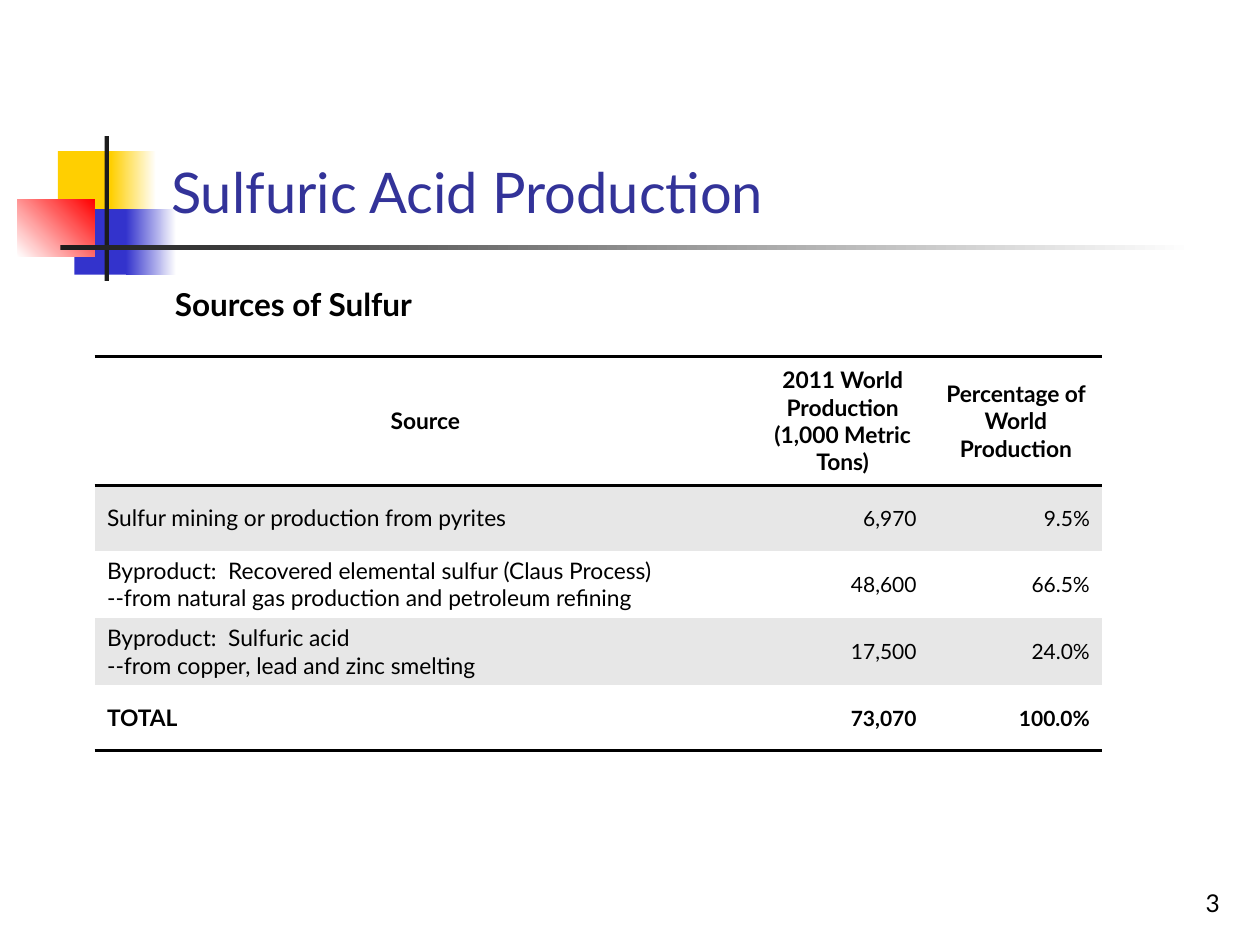
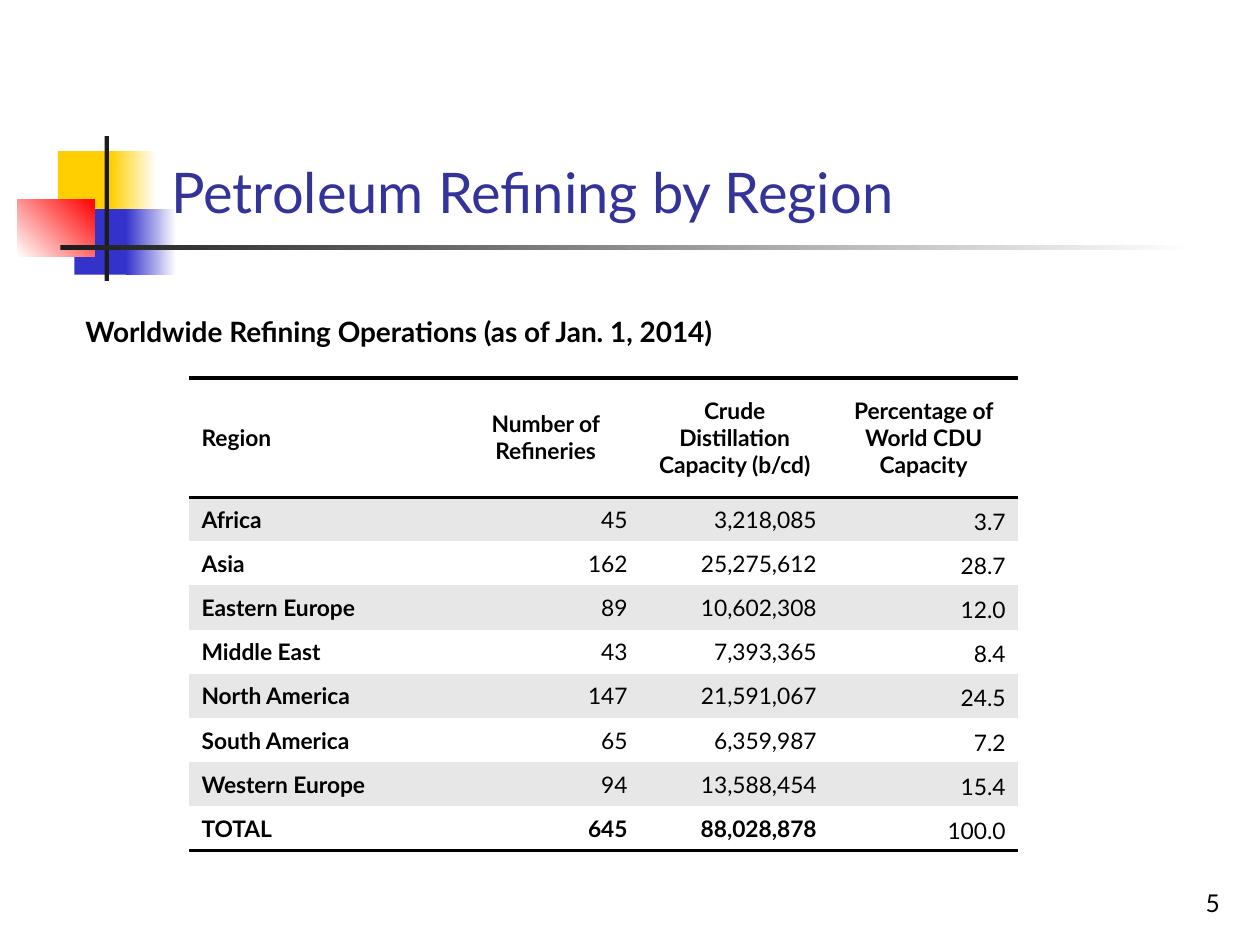
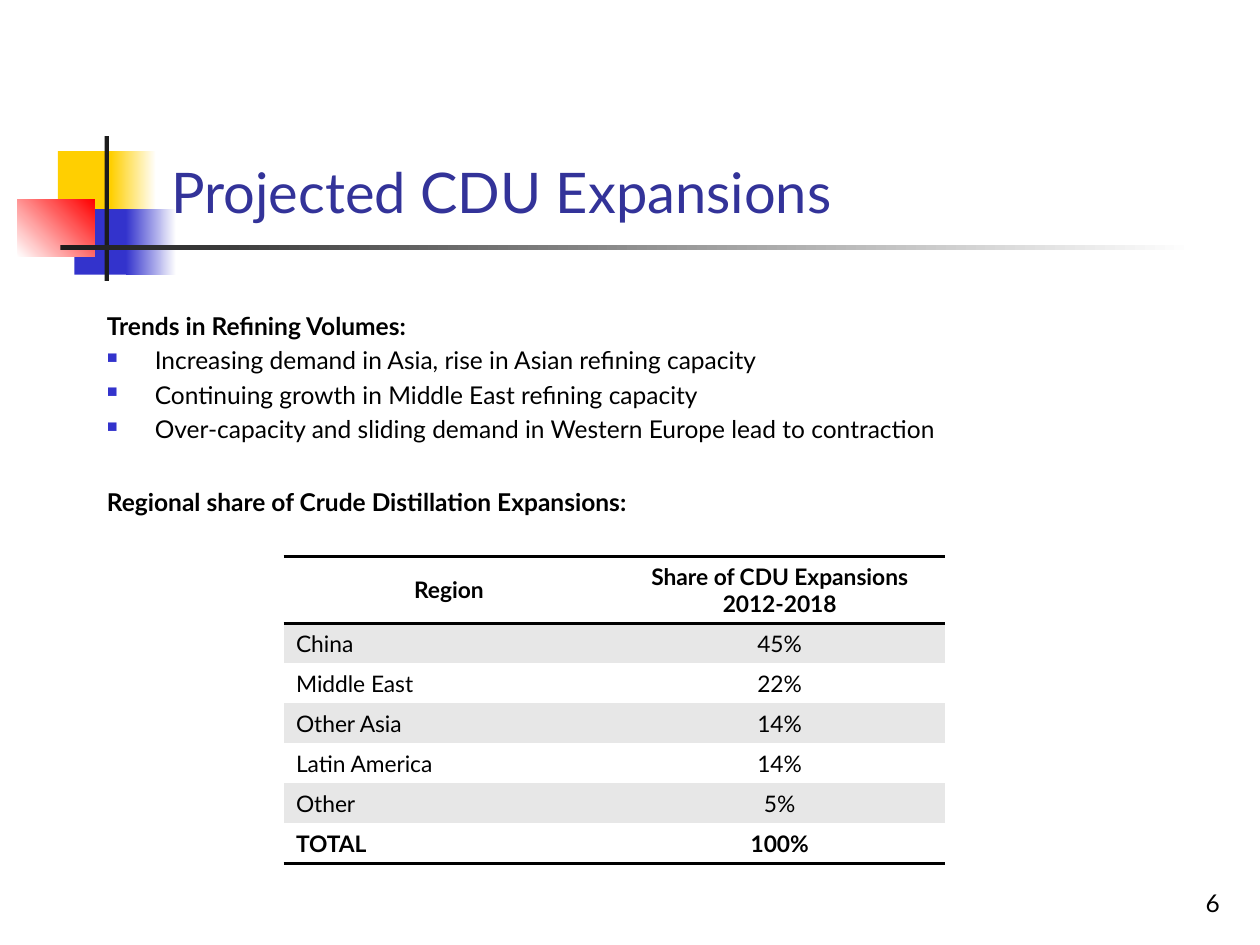
"""Build three slides on sulfur sources and petroleum refining capacity."""
import dataclasses
import typing

import lxml.etree
import pptx
import pptx.dml.color
import pptx.enum.shapes
import pptx.enum.text
import pptx.oxml.ns
import pptx.util

COLORS = {
    "title": "333399",
    "text": "000000",
    "white": "FFFFFF",
    "band": "E7E7E7",
    "yellow": "FFCF01",
    "blue": "3333CC",
    "red": "FF0000",
    "charcoal": "1C1C1C",
}
FONT = "Lato"
SLIDE_WIDTH = pptx.util.Inches(10)
SLIDE_HEIGHT = pptx.util.Inches(7.5)
PLAIN_TABLE_STYLE = "{2D5ABB26-0587-4C30-8999-92F81FD0307C}"
RULE_WIDTH = pptx.util.Pt(2)
BULLET_INDENT = pptx.util.Inches(0.38)
TIGHT_MARGIN = pptx.util.Inches(0.02)

ALIGN = pptx.enum.text.PP_ALIGN
ANCHOR = pptx.enum.text.MSO_ANCHOR


class Box(typing.NamedTuple):
    """Left, top, width and height in percent of the slide."""

    left: float
    top: float
    width: float
    height: float


class Ornament(typing.NamedTuple):
    """A rectangle of the title motif, faded when it has an end colour."""

    box: Box
    start: str
    end: str | None = None
    angle: float = 0


class Line(typing.NamedTuple):
    """One paragraph of text with its style."""

    text: str
    size: float
    bold: bool = False
    color: str = "text"
    align: ALIGN = ALIGN.LEFT
    space_before: float = 0
    bullet: bool = False


class Column(typing.NamedTuple):
    """Style of a table column; width in percent of the slide."""

    width: float
    align: ALIGN = ALIGN.LEFT
    header_align: ALIGN = ALIGN.CENTER
    size: float = 13
    bold: bool = False
    bold_total: bool = True
    anchor: ANCHOR = ANCHOR.MIDDLE
    tight: bool = False


@dataclasses.dataclass(frozen=True)
class DataTable:
    """A ruled table with a header, banded rows and a total row."""

    left: float
    top: float
    header_height: float
    row_height: float
    columns: list[Column]
    rows: list[tuple[str, ...]]


@dataclasses.dataclass(frozen=True)
class Page:
    """Content of one slide."""

    number: int
    title: str
    body_box: Box
    body: list[Line]
    table: DataTable


ORNAMENTS = [
    Ornament(Box(4.6, 16, 4.8, 6.93), "yellow"),
    Ornament(Box(8.8, 16, 3.6, 6.93), "yellow", "white"),
    Ornament(Box(5.9, 22.13, 4.6, 6.93), "blue"),
    Ornament(Box(10, 22.13, 4, 6.93), "blue", "white"),
    Ornament(Box(1.4, 21.07, 6.1, 6.13), "white", "red", 45),
    Ornament(Box(8.3, 14.4, 0.35, 15.33), "charcoal"),
    Ornament(Box(4.8, 25.95, 90, 0.5), "charcoal", "white"),
]
TITLE_BOX = Box(12.6, 3.07, 85.2, 21.33)
NUMBER_BOX = Box(77, 91.07, 20.8, 6.67)

SULFUR_FIGURE = Column(13.75, ALIGN.RIGHT, size=12)
REFINERY_FIGURE = Column(15, ALIGN.RIGHT, tight=True)

PAGES = [
    Page(
        3,
        "Sulfuric Acid Production",
        Box(12.9, 29.47, 85, 6),
        [Line("Sources of Sulfur", 18, bold=True)],
        DataTable(
            7.5, 37.75, 13.6, 6.93,
            [Column(52.5), SULFUR_FIGURE, SULFUR_FIGURE],
            [
                ("Source", "2011 World Production\n(1,000 Metric Tons)",
                 "Percentage of World Production"),
                ("Sulfur mining or production from pyrites", "6,970", "9.5%"),
                ("Byproduct:  Recovered elemental sulfur (Claus Process)\n"
                 "--from natural gas production and petroleum refining",
                 "48,600", "66.5%"),
                ("Byproduct:  Sulfuric acid\n--from copper, lead and zinc smelting",
                 "17,500", "24.0%"),
                ("TOTAL", "73,070", "100.0%"),
            ],
        ),
    ),
    Page(
        5,
        "Petroleum Refining by Region",
        Box(5.8, 32.67, 86.7, 6),
        [Line("Worldwide Refining Operations (as of Jan. 1, 2014)", 16, bold=True)],
        DataTable(
            15, 40, 12.6, 4.68,
            [
                Column(20.8, header_align=ALIGN.LEFT, bold=True, tight=True),
                REFINERY_FIGURE,
                REFINERY_FIGURE,
                Column(15, ALIGN.RIGHT, bold_total=False, anchor=ANCHOR.BOTTOM),
            ],
            [
                ("Region", "Number of Refineries",
                 "Crude Distillation Capacity (b/cd)",
                 "Percentage of World CDU Capacity"),
                ("Africa", "45", "3,218,085", "3.7"),
                ("Asia", "162", "25,275,612", "28.7"),
                ("Eastern Europe", "89", "10,602,308", "12.0"),
                ("Middle East", "43", "7,393,365", "8.4"),
                ("North America", "147", "21,591,067", "24.5"),
                ("South America", "65", "6,359,987", "7.2"),
                ("Western Europe", "94", "13,588,454", "15.4"),
                ("TOTAL", "645", "88,028,878", "100.0"),
            ],
        ),
    ),
    Page(
        6,
        "Projected CDU Expansions",
        Box(7.5, 32.27, 89.2, 25),
        [
            Line("Trends in Refining Volumes:", 14, bold=True),
            *(
                Line(text, 14, space_before=2.8, bullet=True)
                for text in (
                    "Increasing demand in Asia, rise in Asian refining capacity",
                    "Continuing growth in Middle East refining capacity",
                    "Over-capacity and sliding demand in Western Europe lead to contraction",
                )
            ),
            Line("Regional share of Crude Distillation Expansions:", 14,
                 bold=True, space_before=25),
        ],
        DataTable(
            22.5, 58.85, 7.11, 4.22,
            [Column(26.25), Column(26.25, ALIGN.CENTER)],
            [
                ("Region", "Share of CDU Expansions\n2012-2018"),
                ("China", "45%"),
                ("Middle East", "22%"),
                ("Other Asia", "14%"),
                ("Latin America", "14%"),
                ("Other", "5%"),
                ("TOTAL", "100%"),
            ],
        ),
    ),
]


def across(percent: float) -> int:
    """Return a share of the slide width."""
    return round(SLIDE_WIDTH * percent / 100)


def down(percent: float) -> int:
    """Return a share of the slide height."""
    return round(SLIDE_HEIGHT * percent / 100)


def place(box: Box) -> tuple[int, int, int, int]:
    """Turn a box into slide lengths."""
    return across(box.left), down(box.top), across(box.width), down(box.height)


def rgb(name: str) -> pptx.dml.color.RGBColor:
    """Look up a colour."""
    return pptx.dml.color.RGBColor.from_string(COLORS[name])


def add_element(parent, tag: str, **attributes: str):
    """Append a drawing element and return it."""
    return lxml.etree.SubElement(parent, pptx.oxml.ns.qn(tag), attributes)


def style_paragraph(paragraph, size: float, bold: bool, align: ALIGN,
                    color: str = "text") -> None:
    """Set the font and alignment of a paragraph."""
    paragraph.alignment = align
    font = paragraph.font
    font.name = FONT
    font.size = pptx.util.Pt(size)
    font.bold = bold
    font.color.rgb = rgb(color)


def add_bullet(paragraph) -> None:
    """Give a paragraph a small square bullet with a hanging indent."""
    properties = paragraph._p.get_or_add_pPr()
    properties.set("marL", str(BULLET_INDENT))
    properties.set("indent", str(-BULLET_INDENT))
    font_defaults = properties.find(pptx.oxml.ns.qn("a:defRPr"))
    bullet_color = add_element(properties, "a:buClr")
    add_element(bullet_color, "a:srgbClr", val=COLORS["blue"])
    add_element(properties, "a:buSzPct", val="60000")
    add_element(properties, "a:buChar", char="■")
    properties.append(font_defaults)


def add_text(slide, box: Box, lines: list[Line], anchor: ANCHOR = ANCHOR.TOP) -> None:
    """Draw a wrapped text box."""
    frame = slide.shapes.add_textbox(*place(box)).text_frame
    frame.word_wrap = True
    frame.vertical_anchor = anchor
    frame.text = "\n".join(line.text for line in lines)
    for paragraph, line in zip(frame.paragraphs, lines):
        style_paragraph(paragraph, line.size, line.bold, line.align, line.color)
        paragraph.space_before = pptx.util.Pt(line.space_before)
        if line.bullet:
            add_bullet(paragraph)


def add_ornament(slide, ornament: Ornament) -> None:
    """Draw one rectangle of the title motif."""
    shape = slide.shapes.add_shape(
        pptx.enum.shapes.MSO_SHAPE.RECTANGLE, *place(ornament.box))
    shape.shadow.inherit = False
    shape.line.fill.background()
    if ornament.end is None:
        shape.fill.solid()
        shape.fill.fore_color.rgb = rgb(ornament.start)
        return
    shape.fill.gradient()
    shape.fill.gradient_angle = ornament.angle
    for stop, color in zip(shape.fill.gradient_stops, (ornament.start, ornament.end)):
        stop.color.rgb = rgb(color)


def add_rule(cell, tag: str) -> None:
    """Draw a rule along one edge of a cell."""
    edge = add_element(cell._tc.get_or_add_tcPr(), tag, w=str(RULE_WIDTH))
    add_element(add_element(edge, "a:solidFill"), "a:srgbClr", val=COLORS["text"])


def fill_cell(cell, text: str, column: Column, row: int, last_row: int) -> None:
    """Write and style one table cell."""
    header, total = row == 0, row == last_row
    if header:
        add_rule(cell, "a:lnT")
    if header or total:
        add_rule(cell, "a:lnB")
    cell.fill.solid()
    cell.fill.fore_color.rgb = rgb("band" if row % 2 else "white")
    cell.vertical_anchor = ANCHOR.MIDDLE if header else column.anchor
    if column.tight and not header:
        cell.margin_top = cell.margin_bottom = TIGHT_MARGIN
    bold = header or column.bold or (total and column.bold_total)
    size = 13 if header else column.size
    align = column.header_align if header else column.align
    cell.text_frame.text = text
    for paragraph in cell.text_frame.paragraphs:
        style_paragraph(paragraph, size, bold, align)


def add_data_table(slide, data: DataTable) -> None:
    """Draw a ruled table with banded rows."""
    last_row = len(data.rows) - 1
    box = Box(data.left, data.top, sum(column.width for column in data.columns),
              data.header_height + last_row * data.row_height)
    table = slide.shapes.add_table(
        len(data.rows), len(data.columns), *place(box)).table
    table.first_row = table.horz_banding = False
    style = table._tbl.tblPr.find(pptx.oxml.ns.qn("a:tableStyleId"))
    style.text = PLAIN_TABLE_STYLE
    for index, column in enumerate(data.columns):
        table.columns[index].width = across(column.width)
    for row, texts in enumerate(data.rows):
        table.rows[row].height = down(data.row_height if row else data.header_height)
        for index, (text, column) in enumerate(zip(texts, data.columns)):
            fill_cell(table.cell(row, index), text, column, row, last_row)


def add_page(presentation, page: Page) -> None:
    """Add one slide with its motif, title, text, number and table."""
    slide = presentation.slides.add_slide(presentation.slide_layouts[6])
    for ornament in ORNAMENTS:
        add_ornament(slide, ornament)
    add_text(slide, TITLE_BOX, [Line(page.title, 32, color="title")], ANCHOR.BOTTOM)
    add_text(slide, page.body_box, page.body)
    add_text(slide, NUMBER_BOX, [Line(str(page.number), 14, align=ALIGN.RIGHT)],
             ANCHOR.BOTTOM)
    add_data_table(slide, page.table)


def main() -> None:
    """Build and save the presentation."""
    presentation = pptx.Presentation()
    presentation.slide_width = SLIDE_WIDTH
    presentation.slide_height = SLIDE_HEIGHT
    for page in PAGES:
        add_page(presentation, page)
    presentation.save("out.pptx")


if __name__ == "__main__":
    main()
